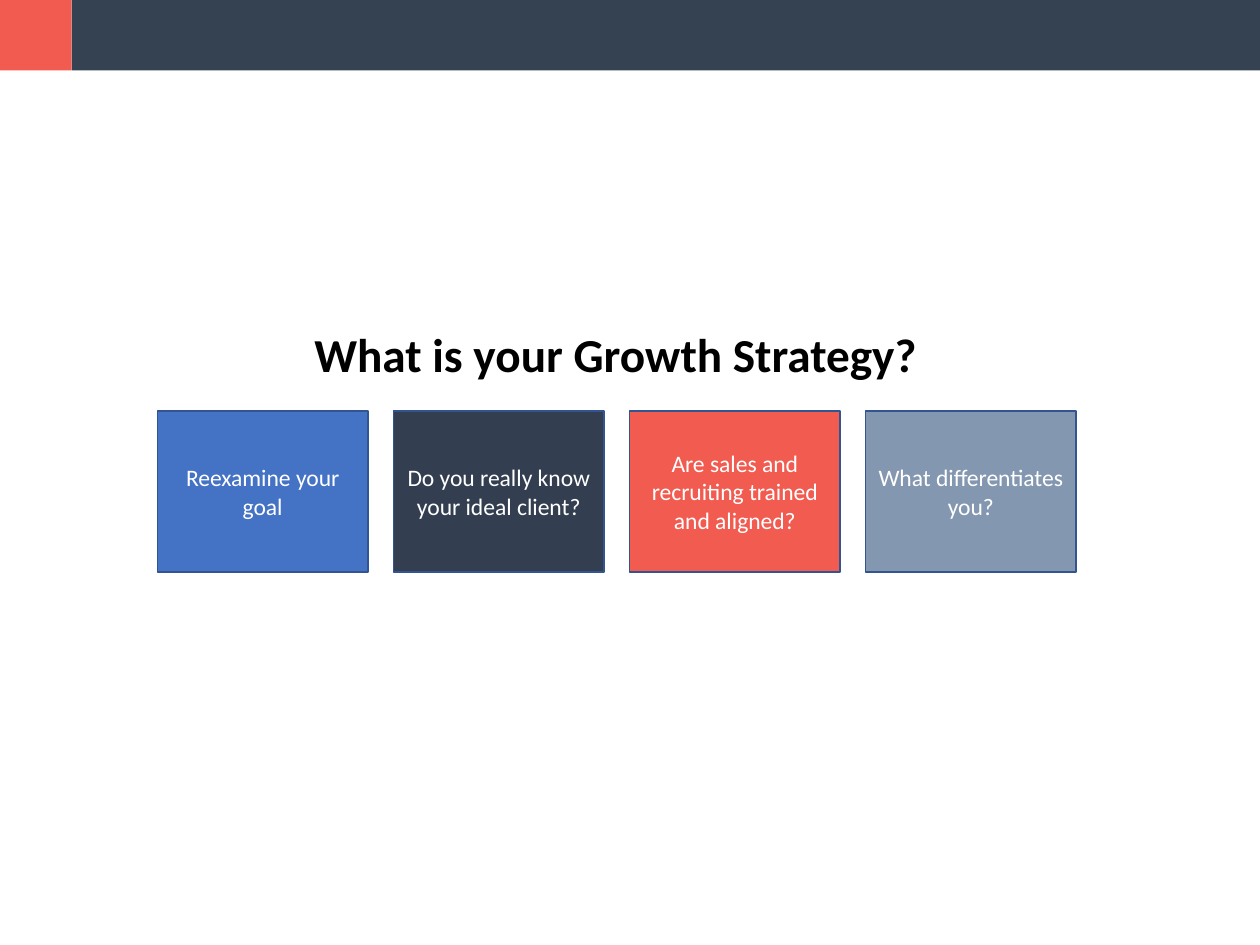
"""Build the growth strategy slide: a header band, a title and four question cards."""
from dataclasses import dataclass

from pptx import Presentation
from pptx.dml.color import RGBColor
from pptx.enum.shapes import MSO_SHAPE
from pptx.enum.text import MSO_ANCHOR, MSO_AUTO_SIZE, PP_ALIGN
from pptx.util import Inches, Pt


@dataclass(frozen=True)
class Theme:
    font: str = "Calibri"
    title_size: float = 27
    card_size: float = 13.5
    outline_width: float = 1
    black: str = "000000"
    white: str = "FFFFFF"
    accent: str = "F15B50"
    band: str = "354252"
    outline: str = "325491"
    blue: str = "4472C4"
    navy: str = "333F50"
    coral: str = "F25B50"
    grey: str = "8497B0"


class Deck:
    WIDTH, HEIGHT = 10, 7.5

    def __init__(self, theme):
        self.theme = theme
        self.prs = Presentation()
        self.prs.slide_width = Inches(self.WIDTH)
        self.prs.slide_height = Inches(self.HEIGHT)
        self.s = self.prs.slides.add_slide(self.prs.slide_layouts[5])

    def box(self, x, y, w, h):
        across, down = self.prs.slide_width, self.prs.slide_height
        return [round(v) for v in (x * across, y * down, w * across, h * down)]

    def label(self, sp, text, size, color, anchor, bold=False, spacing=1.0):
        tf = sp.text_frame
        tf.text = text
        frame = dict(word_wrap=True, auto_size=MSO_AUTO_SIZE.NONE, vertical_anchor=anchor,
                     margin_left=Inches(0.08), margin_right=Inches(0.08),
                     margin_top=Inches(0.04), margin_bottom=Inches(0.04))
        p = tf.paragraphs[0]
        r = p.runs[0]
        para = dict(alignment=PP_ALIGN.CENTER, line_spacing=spacing)
        font = dict(name=self.theme.font, size=Pt(size), bold=bold)
        for target, values in ((tf, frame), (p, para), (r.font, font)):
            for name, value in values.items():
                setattr(target, name, value)
        r.font.color.rgb = RGBColor.from_string(color)

    def title(self, text, *share):
        sp = self.s.shapes.title
        sp.left, sp.top, sp.width, sp.height = self.box(*share)
        self.label(sp, text, self.theme.title_size, self.theme.black,
                   MSO_ANCHOR.BOTTOM, bold=True, spacing=0.9)

    def block(self, fill, *share):
        sp = self.s.shapes.add_shape(MSO_SHAPE.RECTANGLE, *self.box(*share))
        sp.shadow.inherit = False
        sp.fill.solid()
        sp.fill.fore_color.rgb = RGBColor.from_string(fill)
        sp.line.fill.background()
        return sp

    def card(self, text, fill, *share):
        sp = self.block(fill, *share)
        sp.line.color.rgb = RGBColor.from_string(self.theme.outline)
        sp.line.width = Pt(self.theme.outline_width)
        self.label(sp, text, self.theme.card_size, self.theme.white, MSO_ANCHOR.MIDDLE)


def main():
    theme = Theme()
    deck = Deck(theme)
    corner, band_height = 0.57 / deck.WIDTH, 0.56 / deck.HEIGHT
    deck.block(theme.accent, 0, 0, corner, band_height)
    deck.block(theme.band, corner, 0, 1 - corner, band_height)
    deck.title("What is your Growth Strategy?",
               0.45 / deck.WIDTH, 2.03 / deck.HEIGHT, 8.87 / deck.WIDTH, 1.05 / deck.HEIGHT)

    cards = [("Reexamine your goal", theme.blue),
             ("Do you really know your ideal client?", theme.navy),
             ("Are sales and recruiting trained and aligned?", theme.coral),
             ("What differentiates you?", theme.grey)]
    left, right, width = 1.25 / deck.WIDTH, 8.54 / deck.WIDTH, 1.67 / deck.WIDTH
    step = (right - left - width) / (len(cards) - 1)
    for i, (text, fill) in enumerate(cards):
        deck.card(text, fill, left + i * step, 3.26 / deck.HEIGHT, width, 1.28 / deck.HEIGHT)
    deck.prs.save("out.pptx")


if __name__ == "__main__":
    main()
